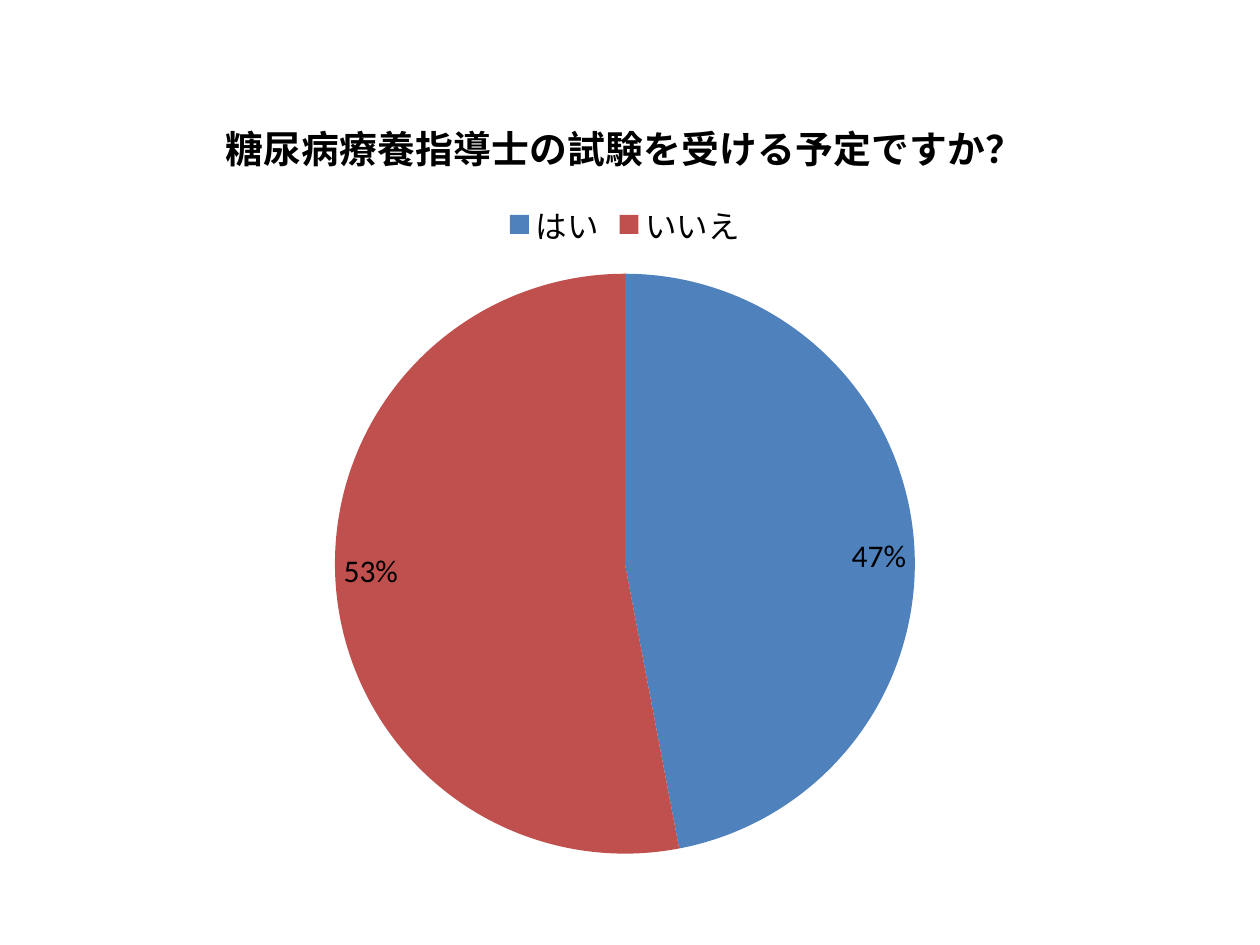
from lxml import etree
from pptx import Presentation
from pptx.chart.data import CategoryChartData
from pptx.dml.color import RGBColor
from pptx.enum.chart import XL_CHART_TYPE, XL_LABEL_POSITION, XL_LEGEND_POSITION
from pptx.oxml.ns import qn
from pptx.util import Inches, Pt

PIE = XL_CHART_TYPE.PIE
INSIDE = XL_LABEL_POSITION.INSIDE_END
TOP = XL_LEGEND_POSITION.TOP

COLORS = {"text": "000000", "はい": "4F81BD", "いいえ": "C0504D"}
TITLE = "糖尿病療養指導士の試験を受ける予定ですか？"
VOTES = {"はい": 47, "いいえ": 53}


def style(font, size, bold=False):
    font.name = "Calibri"
    font.size = Pt(size)
    font.bold = bold
    font.color.rgb = RGBColor.from_string(COLORS["text"])


def set_plot(chart, x, y, w, h):
    area = chart.plots[0]._element.getparent()
    layout = area.find(qn("c:layout"))
    if layout is None:
        layout = etree.Element(qn("c:layout"))
        area.insert(0, layout)
    manual = etree.SubElement(layout, qn("c:manualLayout"))
    parts = {"layoutTarget": "inner", "xMode": "edge", "yMode": "edge",
             "x": x, "y": y, "w": w, "h": h}
    for name, value in parts.items():
        etree.SubElement(manual, qn(f"c:{name}")).set("val", str(value))


def add_pie(slide, left, top, width, height):
    data = CategoryChartData()
    data.categories = list(VOTES)
    data.add_series(TITLE, list(VOTES.values()))
    frame = slide.shapes.add_chart(PIE, left, top, width, height, data)
    chart = frame.chart
    style(chart.font, 18)

    chart.has_title = True
    text = chart.chart_title.text_frame
    text.text = TITLE
    style(text.paragraphs[0].runs[0].font, 21.6, True)
    chart.chart_title.include_in_layout = False

    chart.has_legend = True
    chart.legend.position = TOP
    chart.legend.include_in_layout = False
    style(chart.legend.font, 18)

    plot = chart.plots[0]
    plot.vary_by_categories = True
    for i, name in enumerate(VOTES):
        fill = plot.series[0].points[i].format.fill
        fill.solid()
        fill.fore_color.rgb = RGBColor.from_string(COLORS[name])

    plot.has_data_labels = True
    labels = plot.data_labels
    labels.show_percentage = True
    labels.show_value = False
    labels.number_format = "0%"
    labels.number_format_is_linked = False
    labels.position = INSIDE
    style(labels.font, 18)
    set_plot(chart, 0.23, 0.24, 0.54, 0.74)


def main():
    deck = Presentation()
    deck.slide_width = Inches(10)
    deck.slide_height = Inches(7.5)
    slide = deck.slides.add_slide(deck.slide_layouts[6])
    add_pie(slide, Inches(0.67), Inches(0.68), Inches(8.58), Inches(6.22))
    deck.save("out.pptx")


if __name__ == "__main__":
    main()
